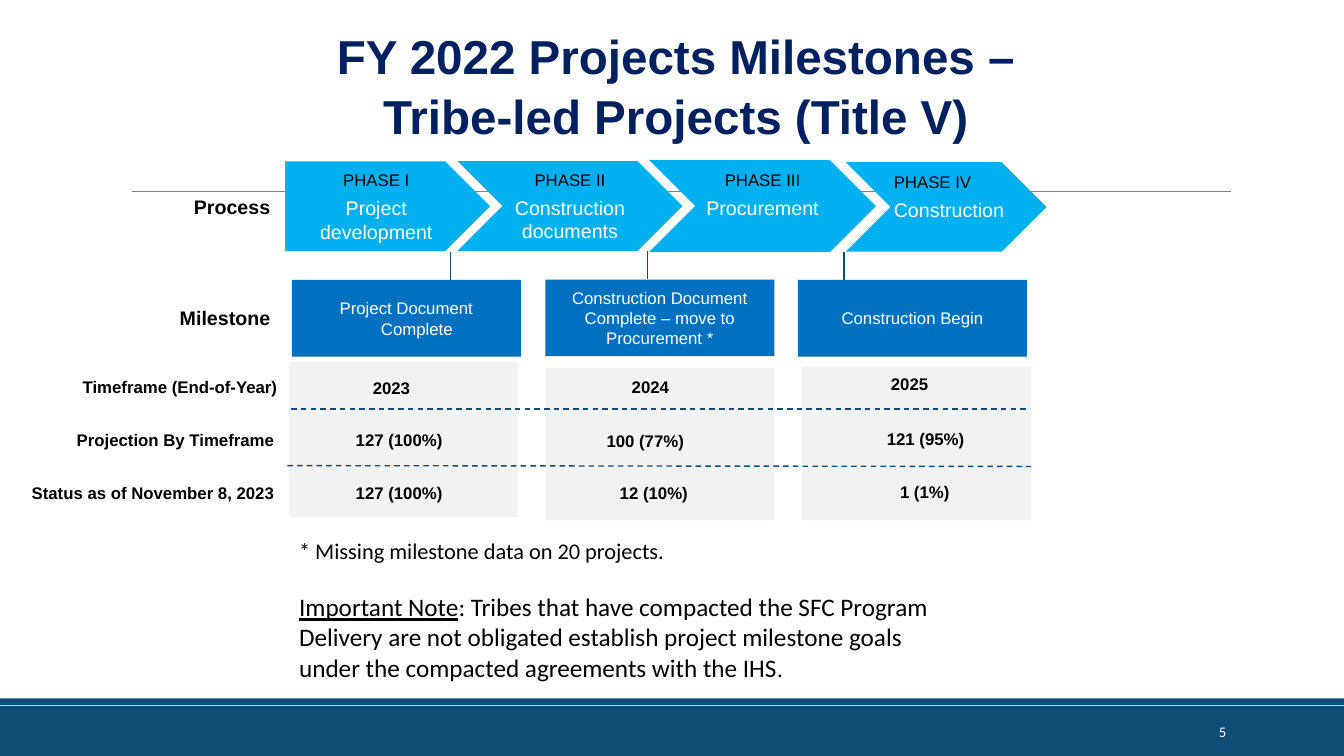
"""Build the FY 2022 tribe-led project milestones slide."""
from typing import NamedTuple

import pptx
import pptx.dml.color
import pptx.enum.dml
import pptx.enum.shapes
import pptx.enum.text
import pptx.oxml.ns
import pptx.shapes.autoshape
import pptx.slide
import pptx.text.text
import pptx.util
from lxml import etree

Pt = pptx.util.Pt
Align = pptx.enum.text.PP_ALIGN
Anchor = pptx.enum.text.MSO_ANCHOR
Preset = pptx.enum.shapes.MSO_SHAPE
NAVY, BLACK, WHITE = "0F4C76", "000000", "FFFFFF"


class Bounds(NamedTuple):
    left: float
    top: float
    width: float
    height: float


class Style(NamedTuple):
    size: float
    color: str = BLACK
    bold: bool = False
    font: str = "Arial"
    align: Align = Align.LEFT


class Block(NamedTuple):
    preset: Preset
    bounds: Bounds
    fill: str


class Phase(NamedTuple):
    block: Block
    name: str = ""
    task: str = ""
    bottom_inset: float = 3.6


class Milestone(NamedTuple):
    left: float
    top: float
    lines: tuple[str, ...]


class Label(NamedTuple):
    text: str
    bounds: Bounds
    style: Style


class Rule(NamedTuple):
    start: tuple[float, float]
    end: tuple[float, float]
    color: str = NAVY
    width: float = 1
    dashed: bool = False


def rgb(value: str) -> pptx.dml.color.RGBColor:
    """Turn a hex string into a colour."""
    return pptx.dml.color.RGBColor.from_string(value)


def apply_style(para: pptx.text.text._Paragraph, style: Style) -> None:
    """Set the alignment and font of a paragraph."""
    para.alignment = style.align
    para.font.size = Pt(style.size)
    para.font.name = style.font
    para.font.bold = style.bold
    para.font.color.rgb = rgb(style.color)


def add_block(page: pptx.slide.Slide, block: Block) -> pptx.shapes.autoshape.Shape:
    """Draw a filled shape without outline."""
    box = page.shapes.add_shape(block.preset, *map(Pt, block.bounds))
    box.shadow.inherit = False
    box.fill.solid()
    box.fill.fore_color.rgb = rgb(block.fill)
    box.line.fill.background()
    box.text_frame.word_wrap = True
    box.text_frame.vertical_anchor = Anchor.MIDDLE
    return box


def add_label(page: pptx.slide.Slide, label: Label) -> pptx.text.text.TextFrame:
    """Draw a wrapping text box with one paragraph."""
    frame = page.shapes.add_textbox(*map(Pt, label.bounds)).text_frame
    frame.word_wrap = True
    frame.paragraphs[0].text = label.text
    apply_style(frame.paragraphs[0], label.style)
    return frame


def add_rule(page: pptx.slide.Slide, rule: Rule) -> None:
    """Draw a straight line without shadow."""
    line = page.shapes.add_connector(
        pptx.enum.shapes.MSO_CONNECTOR.STRAIGHT, *map(Pt, rule.start + rule.end))
    line.line.color.rgb = rgb(rule.color)
    line.line.width = Pt(rule.width)
    if rule.dashed:
        line.line.dash_style = pptx.enum.dml.MSO_LINE.DASH
    etree.SubElement(line._element.spPr, pptx.oxml.ns.qn("a:effectLst"))


def write_phase(frame: pptx.text.text.TextFrame, name: str, task: str, align: Align) -> None:
    """Write a phase name with its task below."""
    title = frame.paragraphs[0]
    title.text = name
    apply_style(title, Style(12, align=align))
    detail = frame.add_paragraph()
    detail.text = task
    detail.space_before = Pt(4.6)
    apply_style(detail, Style(14, WHITE, align=align))


def add_phase(page: pptx.slide.Slide, phase: Phase) -> None:
    """Draw a process arrow and its text."""
    box = add_block(page, phase.block)
    if phase.name:
        box.text_frame.margin_bottom = Pt(phase.bottom_inset)
        write_phase(box.text_frame, phase.name, phase.task, Align.CENTER)


def add_milestone(page: pptx.slide.Slide, milestone: Milestone) -> None:
    """Draw a milestone box, its second line shifted right."""
    bounds = Bounds(milestone.left, milestone.top, 163.6, 54.7)
    frame = add_block(page, Block(Preset.RECTANGLE, bounds, "0070C0")).text_frame
    for index, line in enumerate(milestone.lines):
        para = frame.add_paragraph() if index else frame.paragraphs[0]
        para.text = line
        if index:
            para._p.get_or_add_pPr().set("marL", str(Pt(15)))
        apply_style(para, Style(12, WHITE, align=Align.CENTER))


SKY = "00B0F0"
PHASES = [
    Phase(Block(Preset.PENTAGON, Bounds(203.6, 115.2, 146.5, 64.2), SKY),
          "PHASE I", "Project development"),
    Phase(Block(Preset.CHEVRON, Bounds(326.8, 115.2, 160.7, 64), SKY),
          "PHASE II", "Construction documents"),
    Phase(Block(Preset.CHEVRON, Bounds(463.7, 114.4, 162, 65.6), SKY),
          "PHASE III", "Procurement", 19.7),
    Phase(Block(Preset.CHEVRON, Bounds(604.1, 115.8, 143.4, 64), SKY)),
]
MILESTONES = [
    Milestone(208.5, 200, ("Project Document", "Complete")),
    Milestone(389.5, 199.7, ("Construction Document Complete – move to Procurement *",)),
    Milestone(570, 200, ("Construction Begin",)),
]
PANELS = [Bounds(206.6, 258.5, 163.6, 110.8), Bounds(389.5, 263, 163.6, 108.6),
          Bounds(573, 262.1, 163.6, 109.4)]
BANDS = [Bounds(0, 504.2, 960, 35.8), Bounds(0, 498.8, 960, 4.9)]
RULES = [
    Rule((322, 180), (322, 200)),
    Rule((602.8, 180), (602.8, 200)),
    Rule((462.4, 179.4), (462.4, 199.4)),
    Rule((208, 292.2), (733.5, 292.2), dashed=True),
    Rule((205.2, 332.6), (736.5, 333.2), dashed=True),
]
HEADING = Style(14, bold=True, align=Align.RIGHT)
ROW_NAME = Style(12, bold=True, align=Align.RIGHT)
LABELS = [
    Label("5", Bounds(780, 508.3, 103, 28.8), Style(10.5, WHITE, False, "Calibri", Align.RIGHT)),
    Label("Process", Bounds(101.5, 135.4, 98.7, 24.2), HEADING),
    Label("Milestone", Bounds(101.5, 215.3, 98.7, 24.2), HEADING),
    Label("Timeframe (End-of-Year)", Bounds(15.2, 265.7, 190, 21.8), ROW_NAME),
    Label("Projection By Timeframe", Bounds(13, 303.1, 190, 21.8), ROW_NAME),
    Label("Status as of November 8, 2023", Bounds(13, 341.3, 190, 21.8), ROW_NAME),
    Label("* Missing milestone data on 20 projects.", Bounds(206.6, 380.2, 383.8, 26.6),
          Style(16, font="Calibri")),
]
VALUES = [
    ("2023", 259.2, 266.4), ("2024", 444.2, 265.7), ("2025", 629.3, 263.5),
    ("127 (100%)", 247, 303.1), ("100 (77%)", 426.2, 303.8), ("121 (95%)", 626.4, 302.4),
    ("127 (100%)", 247, 341.3), ("12 (10%)", 435.6, 341.3), ("1 (1%)", 635.8, 340.6),
]


def add_note(page: pptx.slide.Slide) -> None:
    """Write the important note with its underlined lead."""
    bounds = Bounds(206.6, 419, 485.3, 72.7)
    para = add_label(page, Label("", bounds, Style(18, font="Calibri"))).paragraphs[0]
    lead = para.add_run()
    lead.text = "Important Note"
    lead.font.underline = True
    para.add_run().text = (": Tribes that have compacted the SFC Program Delivery are not obligated "
                           "establish project milestone goals under the compacted agreements "
                           "with the IHS")
    stop = para.add_run()
    stop.text = "."
    stop.font.size = Pt(16)


def main() -> None:
    """Build and save the deck."""
    deck = pptx.Presentation()
    deck.slide_width, deck.slide_height = Pt(960), Pt(540)
    page = deck.slides.add_slide(deck.slide_layouts[6])
    for bounds in BANDS:
        add_block(page, Block(Preset.RECTANGLE, bounds, NAVY))
    add_rule(page, Rule((94.3, 136.8), (879, 136.8), "808080", 0.5))
    title = Label("FY 2022 Projects Milestones – Tribe-led Projects (Title V)",
                  Bounds(203.8, 13.7, 558, 90), Style(34, "002060", True, align=Align.CENTER))
    add_label(page, title).paragraphs[0].line_spacing = 1.05
    for phase in PHASES:
        add_phase(page, phase)
    last_phase = page.shapes.add_textbox(*map(Pt, (631.4, 118.8, 93.6, 77.8))).text_frame
    last_phase.word_wrap = True
    write_phase(last_phase, "PHASE IV", "Construction", Align.LEFT)
    for milestone in MILESTONES:
        add_milestone(page, milestone)
    for bounds in PANELS:
        add_block(page, Block(Preset.RECTANGLE, bounds, "F2F2F2"))
    for rule in RULES:
        add_rule(page, rule)
    for label in LABELS:
        frame = add_label(page, label)
        if label.text == "5":
            frame.vertical_anchor = Anchor.MIDDLE
    for text, left, top in VALUES:
        add_label(page, Label(text, Bounds(left, top, 93.6, 21.8), Style(12, bold=True)))
    add_note(page)
    deck.save("out.pptx")


if __name__ == "__main__":
    main()
